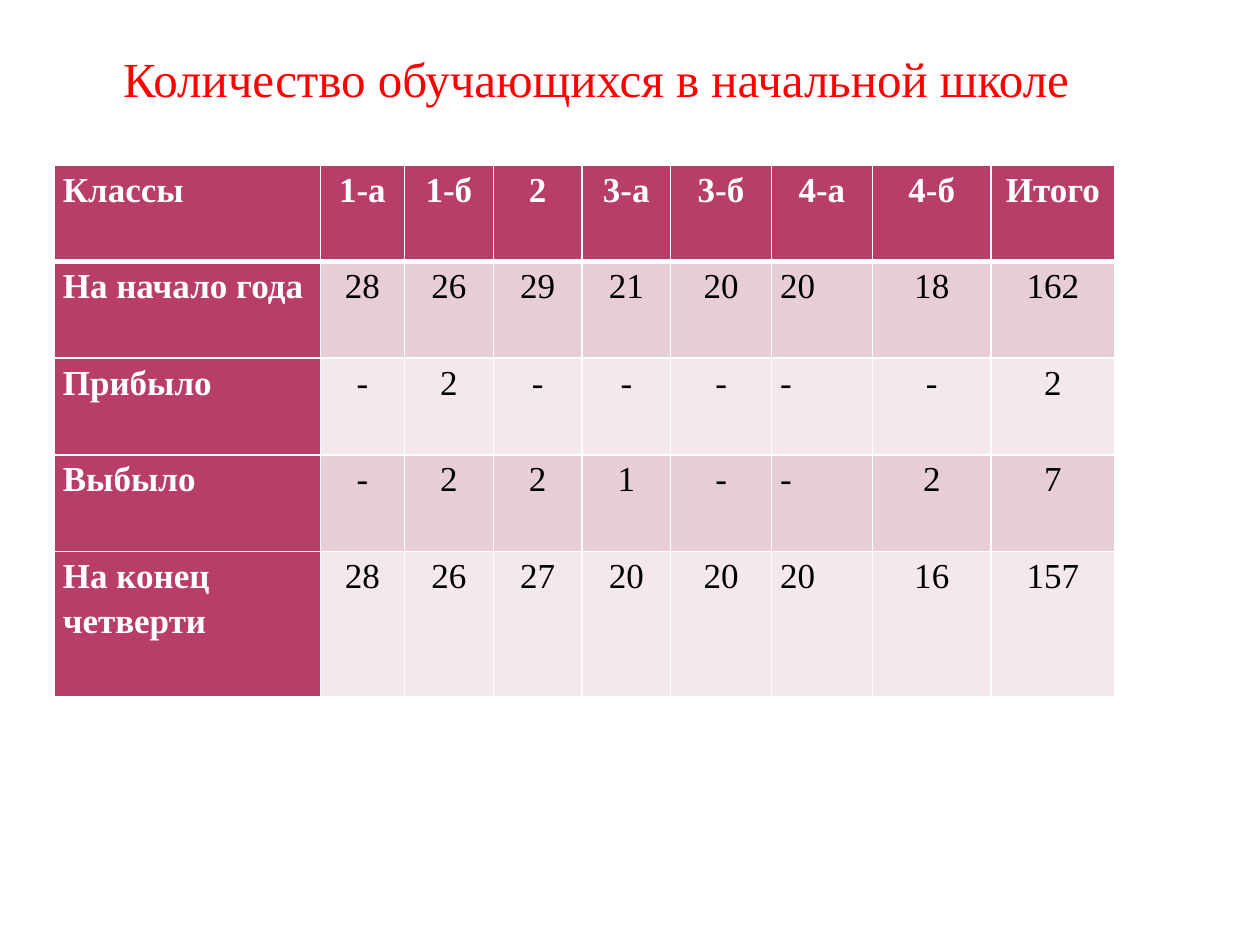
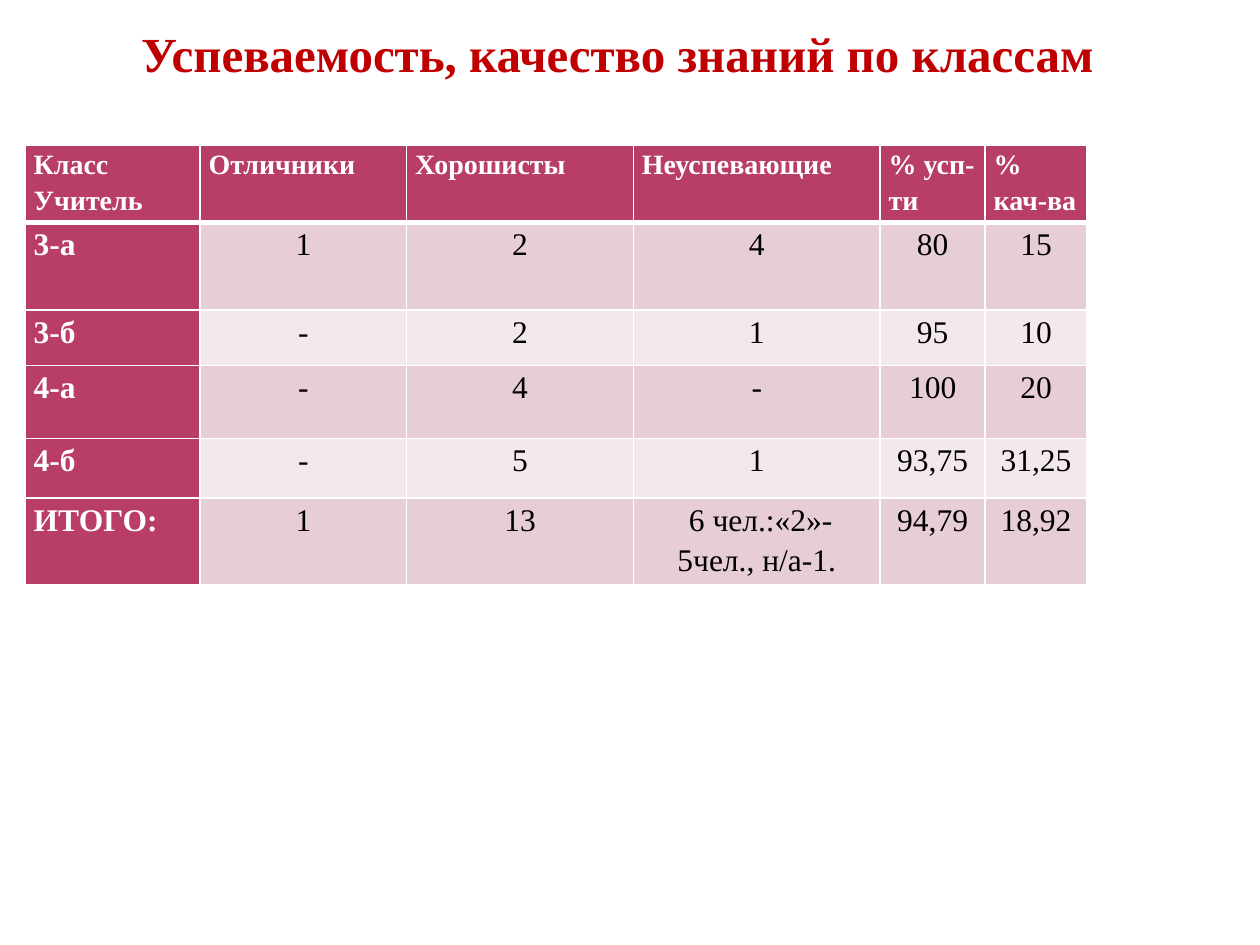
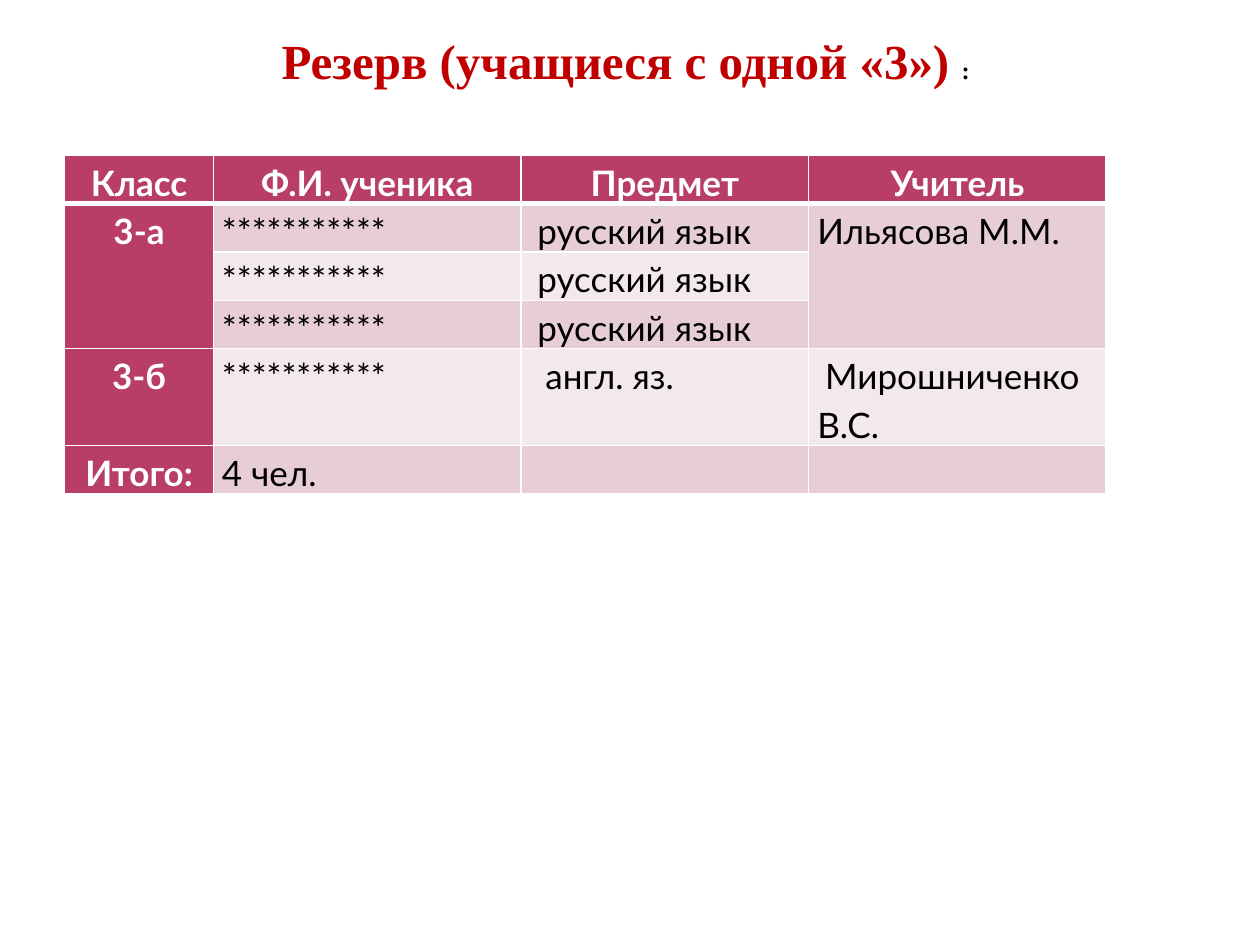
"""Builds three slides of primary school results, each a title above a table."""
from lxml import etree
from pptx import Presentation
from pptx.dml.color import RGBColor
from pptx.enum.text import MSO_ANCHOR, MSO_AUTO_SIZE, PP_ALIGN
from pptx.oxml.ns import qn
from pptx.util import Pt

MIDDLE = MSO_ANCHOR.MIDDLE
FIT_SHAPE = MSO_AUTO_SIZE.SHAPE_TO_FIT_TEXT
ALIGN = {"l": PP_ALIGN.LEFT, "c": PP_ALIGN.CENTER}
COLORS = {"red": "FF0000", "dark red": "C00000", "black": "000000", "white": "FFFFFF",
          "heading": "B83D68", "odd row": "E6CED4", "even row": "F3E8EB"}
SERIF, SANS = "Times New Roman", "Lato"
TITLE_SIZE, TITLE_HEIGHT = 28, 41
SIDE_INSET, LINE_SPACING = 4.9, 1.15
THIN, THICK = 1, 3
STARS = "*" * 11

SLIDES = [
    {
        "title": [("Количество обучающихся в начальной школе",
                   {"size": TITLE_SIZE, "color": "red"})],
        "title_place": (60, 24, 561),
        "table_place": (31, 94.3),
        "columns": [152, 48.2, 50.7, 50.7, 50.7, 57.6, 57.6, 68, 70.5],
        "heights": [55.2] * 4 + [83],
        "font": SERIF, "head_size": 20, "body_size": 20,
        "head_align": "lcccccccc", "body_align": "lccccclcc",
        "rows": [
            ["Классы", "1-а", "1-б", "2", "3-а", "3-б", "4-а", "4-б", "Итого"],
            ["На начало года", "28", "26", "29", "21", "20", "20", "18", "162"],
            ["Прибыло", "-", "2", "-", "-", "-", "-", "-", "2"],
            ["Выбыло", "-", "2", "2", "1", "-", "-", "2", "7"],
            ["На конец четверти", "28", "26", "27", "20", "20", "20", "16", "157"],
        ],
    },
    {
        "title": [("Успеваемость, качество знаний по классам",
                   {"size": TITLE_SIZE, "color": "dark red", "bold": True})],
        "title_place": (70.5, 9.5, 564.5),
        "table_place": (14.4, 83),
        "columns": [100, 118, 129.6, 141, 60, 58.2],
        "heights": [43.6, 50, 31.7, 41.7, 34, 49.7],
        "font": SERIF, "head_size": 16, "body_size": 18,
        "head_align": "llllll", "body_align": "lccccc",
        "rows": [
            ["Класс\nУчитель", "Отличники", "Хорошисты", "Неуспевающие",
             "% усп-ти", "%\nкач-ва"],
            ["3-а", "1", "2", "4", "80", "15"],
            ["3-б", "-", "2", "1", "95", "10"],
            ["4-а", "-", "4", "-", "100", "20"],
            ["4-б", "-", "5", "1", "93,75", "31,25"],
            ["ИТОГО:", "1", "13", "6 чел.:«2»-\v5чел., н/а-1.", "94,79", "18,92"],
        ],
        "indents": {(5, 3): 4.5},
    },
    {
        "title": [("Резерв (учащиеся с одной «3») ",
                   {"size": TITLE_SIZE, "color": "dark red", "bold": True}),
                  (":", {"size": 14, "color": "black", "bold": True})],
        "title_place": (150.5, 13.5, 414),
        "table_place": (37, 88.7),
        "columns": [85, 175.8, 164.4, 170],
        "heights": [27.6] * 4 + [55.2, 27.6],
        "font": SANS, "head_size": 20, "body_size": 20,
        "head_align": "cccc", "body_align": "clll",
        "rows": [
            ["Класс", "Ф.И. ученика", "Предмет", "Учитель"],
            ["3-а", STARS, "русский язык", "Ильясова М.М."],
            ["", STARS, "русский язык", ""],
            ["", STARS, "русский язык", ""],
            ["3-б", STARS, "англ. яз.", "Мирошниченко В.С."],
            ["Итого:", "4 чел.", "", ""],
        ],
        "indents": {(1, 2): 4.5, (2, 2): 4.5, (3, 2): 4.5, (4, 2): 9, (4, 3): 4.5},
        "merges": [((1, 0), (3, 0)), ((1, 3), (3, 3))],
    },
]


def add_text(paragraph, text, *, size, color, font=SERIF, bold=False):
    for number, line in enumerate(text.split("\v")):
        if number:
            paragraph.add_line_break()
        span = paragraph.add_run()
        span.text = line
        span.font.name = font
        span.font.size = Pt(size)
        span.font.bold = bold
        span.font.color.rgb = RGBColor.from_string(COLORS[color])


def add_title(page, parts, place):
    left, top, width = place
    box = page.shapes.add_textbox(Pt(left), Pt(top), Pt(width), Pt(TITLE_HEIGHT))
    frame = box.text_frame
    frame.word_wrap = False
    frame.auto_size = FIT_SHAPE
    frame.vertical_anchor = MIDDLE
    paragraph = frame.paragraphs[0]
    paragraph.alignment = ALIGN["c"]
    for text, style in parts:
        add_text(paragraph, text, **style)


def add_borders(cell, bottom):
    properties = cell._tc.get_or_add_tcPr()
    for side, width in (("L", THIN), ("R", THIN), ("T", THIN), ("B", bottom)):
        line = etree.SubElement(properties, qn(f"a:ln{side}"), w=str(Pt(width)))
        fill = etree.SubElement(line, qn("a:solidFill"))
        etree.SubElement(fill, qn("a:srgbClr"), val=COLORS["white"])


def fill_cell(cell, text, *, fill, align, indent, **style):
    cell.margin_left = cell.margin_right = Pt(SIDE_INSET)
    cell.margin_top = cell.margin_bottom = 0
    cell.fill.solid()
    cell.fill.fore_color.rgb = RGBColor.from_string(COLORS[fill])
    frame = cell.text_frame
    for number, line in enumerate(text.split("\n")):
        paragraph = frame.add_paragraph() if number else frame.paragraphs[0]
        paragraph.alignment = ALIGN[align]
        paragraph.line_spacing = LINE_SPACING
        if indent:
            paragraph._p.get_or_add_pPr().set("indent", str(Pt(indent)))
        if line:
            add_text(paragraph, line, **style)


def add_grid(page, content):
    rows, columns, heights = content["rows"], content["columns"], content["heights"]
    left, top = content["table_place"]
    table = page.shapes.add_table(len(rows), len(columns), Pt(left), Pt(top),
                                  Pt(sum(columns)), Pt(sum(heights))).table
    table.first_row = table.horz_banding = False
    for column, width in zip(table.columns, columns):
        column.width = Pt(width)
    for row, height in zip(table.rows, heights):
        row.height = Pt(height)
    for r, texts in enumerate(rows):
        part = "body" if r else "head"
        for c, text in enumerate(texts):
            cell = table.cell(r, c)
            heading = r == 0 or c == 0
            add_borders(cell, THIN if r else THICK)
            if r == 1:
                edge = cell._tc.tcPr.find(qn("a:lnT"))
                edge.set("w", str(Pt(THICK)))
            fill_cell(cell, text,
                      fill="heading" if heading else "odd row" if r % 2 else "even row",
                      align=content[f"{part}_align"][c],
                      indent=content.get("indents", {}).get((r, c), 0),
                      size=content[f"{part}_size"], font=content["font"],
                      color="white" if heading else "black", bold=heading)
    for first, last in content.get("merges", []):
        table.cell(*first).merge(table.cell(*last))


def main():
    deck = Presentation()
    deck.slide_width, deck.slide_height = Pt(720), Pt(540)
    for content in SLIDES:
        page = deck.slides.add_slide(deck.slide_layouts[6])
        add_title(page, content["title"], content["title_place"])
        add_grid(page, content)
    deck.save("out.pptx")


if __name__ == "__main__":
    main()
